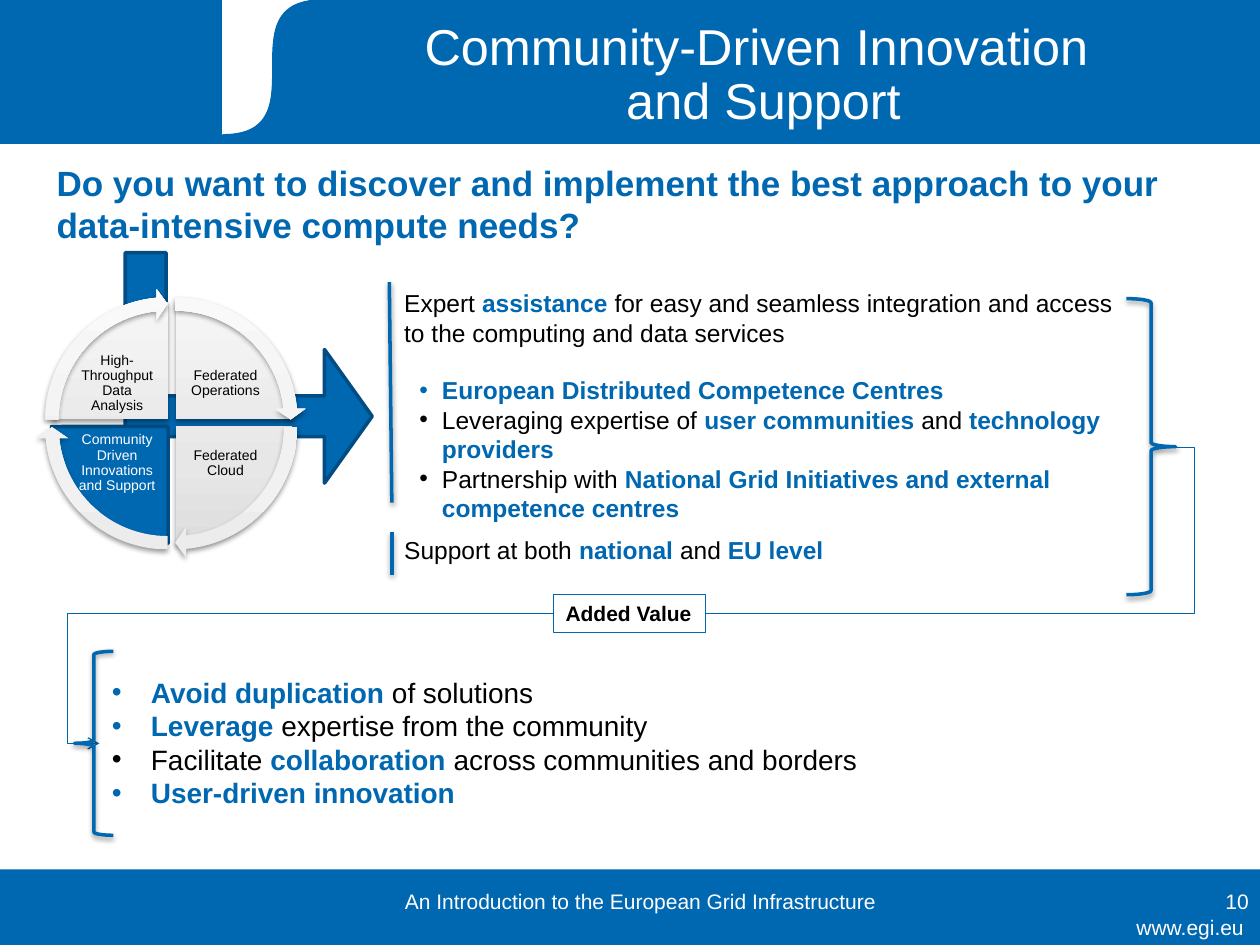
"""Build the community-driven innovation and support slide."""
from copy import deepcopy
from dataclasses import dataclass

from lxml import etree
from pptx import Presentation
from pptx.dml.color import RGBColor as Rgb
from pptx.enum import shapes as es, text as et
from pptx.oxml import ns
from pptx.util import Inches, Pt

Kind, Align, Anchor = es.MSO_SHAPE, et.PP_ALIGN, et.MSO_ANCHOR


@dataclass(frozen=True)
class Theme:
    font: str = "Arial"
    blue: str = "0067B1"
    link: str = "0065AD"
    edge: str = "004C83"
    white: str = "FFFFFF"
    black: str = "000000"
    pale: tuple = ("DDDDDD", "E7E7E7", "F6F6F6")
    ring: tuple = ("ECECEC", "F1F1F1", "F9F9F9")
    title: float = 28.8
    lead: float = 20
    list: float = 16
    body: float = 14
    small: float = 12
    tiny: float = 8


@dataclass(frozen=True)
class Box:
    x: float
    y: float
    w: float
    h: float

    def emu(self) -> tuple:
        """Return the box as lengths."""
        return tuple(Inches(v) for v in (self.x, self.y, self.w, self.h))


@dataclass(frozen=True)
class Part:
    text: str
    right: bool
    low: bool
    start: int
    live: bool = False


@dataclass(frozen=True)
class Para:
    text: str
    left: float = 0
    hang: float = 0
    before: float = 0


T = Theme()
QUARTER = 54
PARTS = (
    Part("Federated Operations", True, False, 162),
    Part("Federated Cloud", True, True, 0),
    Part("Community Driven Innovations and Support", False, True, 54, True),
    Part("High-Throughput Data Analysis", False, False, 108),
)
HELP = (
    Para("Expert *assistance *for easy and seamless integration and access "
         "to the computing and data services"),
    Para("*European Distributed Competence Centres", 0.3, 0.18, 16),
    Para("Leveraging expertise of *user communities *and *technology providers", 0.3, 0.18),
    Para("Partnership with *National Grid Initiatives and external competence centres", 0.3, 0.18),
)
GAINS = tuple(Para(t, 0.31, 0.31) for t in (
    "*Avoid duplication *of solutions",
    "*Leverage *expertise from the community",
    "Facilitate *collaboration *across communities and borders",
    "*User-driven innovation",
))


def write(frame, paras, size: float, color: str = T.black, accent: str = T.blue,
          align=Align.LEFT, anchor=Anchor.TOP, pitch: float = 1.0) -> None:
    """Fill a frame; asterisks switch the bold accent on and off."""
    frame.word_wrap, frame.vertical_anchor = True, anchor
    for i, para in enumerate(paras):
        p = frame.paragraphs[0] if i == 0 else frame.add_paragraph()
        p.alignment, p.line_spacing = align, pitch
        p.space_before = Pt(para.before)
        if para.hang:
            props = p._p.get_or_add_pPr()
            props.set("marL", str(Inches(para.left)))
            props.set("indent", str(-Inches(para.hang)))
            etree.SubElement(props, ns.qn("a:buFont"), typeface=T.font)
            etree.SubElement(props, ns.qn("a:buChar"), char="•")
        for j, part in enumerate(para.text.split("*")):
            bold = j % 2 == 1
            for k, bit in enumerate(part.split("\n")):
                if k:
                    p.add_line_break()
                if bit:
                    run = p.add_run()
                    run.text = bit
                    run.font.name, run.font.size, run.font.bold = T.font, Pt(size), bold
                    run.font.color.rgb = Rgb.from_string(accent if bold else color)


def label(slide, box: Box, paras, size: float, inset: float = 0, **look):
    """Add a text box."""
    frame = slide.shapes.add_textbox(*box.emu()).text_frame
    if inset:
        frame.margin_left = frame.margin_right = Inches(inset)
        frame.margin_top = frame.margin_bottom = Inches(inset)
    write(frame, paras, size, **look)


def shade(item) -> None:
    """Give an item a soft shadow below."""
    fx = etree.SubElement(item.element.spPr, ns.qn("a:effectLst"))
    drop = etree.SubElement(fx, ns.qn("a:outerShdw"), blurRad=str(Pt(3.1)), dist=str(Pt(1.6)),
                            dir="5400000", rotWithShape="0")
    tone = etree.SubElement(drop, ns.qn("a:srgbClr"), val=T.black)
    etree.SubElement(tone, ns.qn("a:alpha"), val="38000")


def paint(item, fill=None, line=None, width: float = 0.75, soft: bool = False):
    """Set fill, line and shadow of a shape."""
    if isinstance(fill, tuple):
        item.fill.gradient()
        item.fill.gradient_angle = 90
        stops = item.element.spPr.find(".//" + ns.qn("a:gsLst"))
        stops.insert(1, deepcopy(stops[0]))
        for stop, tone, place in zip(item.fill.gradient_stops, fill, (0, 0.35, 1)):
            stop.color.rgb, stop.position = Rgb.from_string(tone), place
    elif fill:
        item.fill.solid()
        item.fill.fore_color.rgb = Rgb.from_string(fill)
    else:
        item.fill.background()
    if line:
        item.line.color.rgb, item.line.width = Rgb.from_string(line), Pt(width)
    else:
        item.line.fill.background()
    if soft:
        shade(item)
    else:
        item.shadow.inherit = False
    return item


def shape(slide, kind, box: Box, adj: tuple = (), **look):
    """Add a painted preset shape."""
    item = slide.shapes.add_shape(kind, *box.emu())
    for i, val in enumerate(adj):
        item.adjustments[i] = val
    return paint(item, **look)


def link(slide, ends: tuple, color: str, width: float, bend: float = 0,
         head: bool = False, soft: bool = False) -> None:
    """Add a straight or bent line."""
    kind = es.MSO_CONNECTOR.ELBOW if bend else es.MSO_CONNECTOR.STRAIGHT
    item = slide.shapes.add_connector(kind, *(Inches(v) for v in ends))
    item.line.color.rgb, item.line.width = Rgb.from_string(color), Pt(width)
    if bend:
        guides = item.element.spPr.find(".//" + ns.qn("a:avLst"))
        etree.SubElement(guides, ns.qn("a:gd"), name="adj1", fmla=f"val {round(bend * 100000)}")
    if head:
        etree.SubElement(item.line._get_or_add_ln(), ns.qn("a:tailEnd"), type="arrow")
    if soft:
        shade(item)
    else:
        etree.SubElement(item.element.spPr, ns.qn("a:effectLst"))


def bands(slide) -> None:
    """Draw the footer and the header with its curved edge."""
    shape(slide, Kind.RECTANGLE, Box(0, 6.9, 10, 0.6), fill=T.blue)
    shape(slide, Kind.RECTANGLE, Box(0, 0, 10, 1.14), fill=T.blue, line=T.blue)
    left, mid, right, base, steps = 1.77, 2.56, 3.74, 1.07, 40
    shape(slide, Kind.RECTANGLE, Box(left, 0, right - left, base), fill=T.white, line=T.white)
    curve = []
    for t in (i / steps for i in range(1, steps + 1)):
        s = 1 - t
        ease = 3 * s * s * t + t ** 3
        curve.append((left + (mid - left) * ease, base * (s ** 3 + 3 * s * s * t)))
    pen = slide.shapes.build_freeform(Inches(right), Inches(0))
    dots = [(right, base), (left, base)] + curve
    pen.add_line_segments([(Inches(x), Inches(y)) for x, y in dots], close=True)
    paint(pen.convert_to_shape(), fill=T.blue, line=T.blue)


def wheel(slide) -> None:
    """Draw the four quarters, their labels and the ring of arrows."""
    spots = [(0.47 if p.right else 0.41, 2.46 if p.low else 2.4) for p in PARTS]
    for p, (x, y) in zip(PARTS, spots):
        look = dict(fill=T.blue, line=T.edge, width=2) if p.live else dict(fill=T.pale, soft=True)
        shape(slide, Kind.PIE, Box(x, y, 1.85, 1.85), (p.start, (p.start + QUARTER) % 216), **look)
        area = Box(1.45 if p.right else 0.59, 3.42 if p.low else 2.79, 0.68, 0.51)
        label(slide, area, [Para(p.text)], T.tiny, 0.01, color=T.white if p.live else T.black,
              align=Align.CENTER, anchor=Anchor.MIDDLE, pitch=0.9)
    for p, (x, y) in zip(PARTS, spots):
        turn = (0.051, 3.275, p.start + QUARTER - 3.275, p.start, 0.059)
        shape(slide, Kind.CIRCULAR_ARROW, Box(x - 0.12, y - 0.11, 2.08, 2.08), turn,
              fill=T.ring, soft=True)


def main() -> None:
    """Build and save the slide."""
    deck = Presentation()
    deck.slide_width, deck.slide_height = Inches(10), Inches(7.5)
    slide = deck.slides.add_slide(deck.slide_layouts[5])
    bands(slide)
    title = slide.shapes.title
    slide.shapes.element.append(title.element)
    title.left, title.top, title.width, title.height = Box(2.32, 0.13, 7.48, 0.95).emu()
    write(title.text_frame, [Para("Community-Driven Innovation \nand Support")], T.title, T.white,
          align=Align.CENTER, anchor=Anchor.MIDDLE, pitch=0.9)
    for text, box, align in (
        ("www.egi.eu", Box(8.39, 7.2, 1.58, 0.31), Align.RIGHT),
        ("10", Box(7.68, 6.95, 2.33, 0.4), Align.RIGHT),
        ("An Introduction to the European Grid Infrastructure", Box(2.8, 6.95, 4.57, 0.4), Align.CENTER),
    ):
        label(slide, box, [Para(text)], T.small, color=T.white, align=align, anchor=Anchor.MIDDLE)
    label(slide, Box(3.11, 2.24, 5.83, 1.99), HELP, T.body)
    label(slide, Box(3.11, 4.2, 5.83, 0.34), [Para("Support at both *national *and *EU level")], T.body)
    for ends in ((3.09, 2.24, 3.11, 3.99), (3.11, 4.22, 3.11, 4.56)):
        link(slide, ends, T.blue, 2, soft=True)
    arrow = shape(slide, Kind.BENT_UP_ARROW, Box(1.06, 1.94, 1.83, 1.96), (0.177, 0.29, 0.207),
                  fill=T.blue, line=T.edge, width=2)
    arrow.rotation = 270
    for flip in ("flipH", "flipV"):
        arrow.element.spPr.xfrm.set(flip, "1")
    wheel(slide)
    label(slide, Box(0.35, 1.23, 9.21, 0.77), [Para(
        "*Do you want to discover and implement the best approach to your "
        "data-intensive compute needs?")], T.lead)
    shape(slide, Kind.RIGHT_BRACE, Box(8.94, 2.37, 0.39, 2.35), line=T.blue, width=2, soft=True)
    value = shape(slide, Kind.RECTANGLE, Box(4.39, 4.72, 1.21, 0.3), fill=T.white, line=T.blue, width=0.25)
    write(value.text_frame, [Para("*Added Value")], T.small, accent=T.black)
    value.text_frame.word_wrap = False
    label(slide, Box(0.79, 5.31, 8.66, 1.18), GAINS, T.list)
    link(slide, (4.39, 4.87, 0.79, 5.9), T.link, 0.75, bend=1.07, head=True)
    link(slide, (9.33, 3.55, 5.6, 4.87), T.link, 0.75, bend=-0.04)
    shape(slide, Kind.LEFT_BRACE, Box(0.59, 5.17, 0.31, 1.46), line=T.blue, width=2, soft=True)
    deck.save("out.pptx")


if __name__ == "__main__":
    main()
